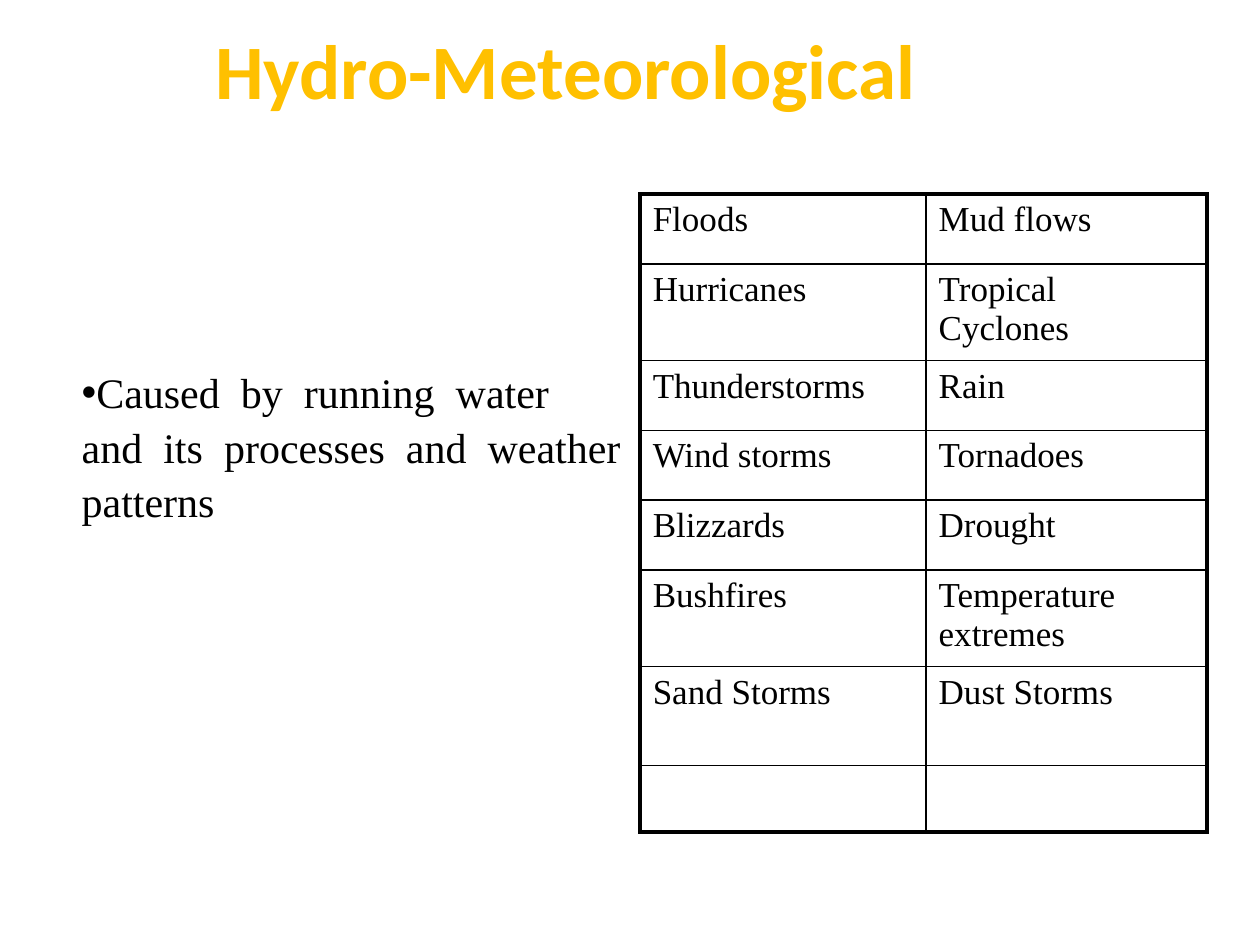
"""Build the hydro-meteorological hazards slide."""
from pptx import Presentation
from pptx.dml.color import RGBColor
from pptx.enum.text import MSO_ANCHOR
from pptx.oxml.ns import qn
from pptx.util import Pt
from lxml.etree import SubElement

TITLE = "Hydro-Meteorological"
CAUSE = "Caused by running water and its processes and weather patterns"
HAZARDS = [
    ("Floods", "Mud flows"),
    ("Hurricanes", "Tropical Cyclones"),
    ("Thunderstorms", "Rain"),
    ("Wind storms", "Tornadoes"),
    ("Blizzards", "Drought"),
    ("Bushfires", "Temperature extremes"),
    ("Sand Storms", "Dust Storms"),
    ("", ""),
]
ROW_HEIGHTS = [39.9, 51.4, 39.9, 39.9, 39.9, 51.4, 56.6, 38]
COLUMN_WIDTHS = [163.4, 160.6]
THEME = {
    "heading_font": "Calibri", "body_font": "Times New Roman",
    "amber": "FFC000", "black": "000000",
    "title_size": 44, "cause_size": 24, "hazard_size": 20,
    "outer_line": 2.25, "inner_line": 1,
}


def write(frame, text, *, size, font=THEME["body_font"], color=THEME["black"],
          bold=False, spacing=1.0, bullet=None, word_gap=0):
    """Write one formatted paragraph, optionally bulleted or with wide word gaps."""
    paragraph = frame.paragraphs[0]
    paragraph.line_spacing = spacing
    if bullet:
        properties = paragraph._p.get_or_add_pPr()
        properties.set("marL", "0")
        properties.set("indent", "0")
        SubElement(properties, qn("a:buFont")).set("typeface", "Arial")
        SubElement(properties, qn("a:buChar")).set("char", bullet)
    pieces = text.replace(" ", "| |").split("|") if word_gap else [text]
    for piece in pieces:
        run = paragraph.add_run()
        run.text = piece
        run.font.size = Pt(size)
        run.font.name = font
        run.font.bold = bold
        run.font.color.rgb = RGBColor.from_string(color)
        if piece == " ":
            run._r.get_or_add_rPr().set("spc", str(word_gap * 100))


def add_frame(slide, left, top, width, height):
    """Add a wrapping text box and return its text frame."""
    frame = slide.shapes.add_textbox(Pt(left), Pt(top), Pt(width), Pt(height)).text_frame
    frame.word_wrap = True
    return frame


def draw_borders(cell, widths):
    """Draw the left, right, top and bottom borders of a cell."""
    properties = cell._tc.get_or_add_tcPr()
    for position, (side, width) in enumerate(widths.items()):
        border = properties.makeelement(qn(f"a:{side}"), {"w": str(Pt(width))})
        fill = SubElement(border, qn("a:solidFill"))
        SubElement(fill, qn("a:srgbClr")).set("val", THEME["black"])
        properties.insert(position, border)


def add_hazards(slide, left, top):
    """Add the ruled table of hazards."""
    table = slide.shapes.add_table(
        len(HAZARDS), len(COLUMN_WIDTHS), Pt(left), Pt(top),
        Pt(sum(COLUMN_WIDTHS)), Pt(sum(ROW_HEIGHTS))).table
    table.first_row = table.horz_banding = False
    for column, width in zip(table.columns, COLUMN_WIDTHS):
        column.width = Pt(width)
    for row, height in zip(table.rows, ROW_HEIGHTS):
        row.height = Pt(height)
    last_row, last_column = len(HAZARDS) - 1, len(COLUMN_WIDTHS) - 1
    for r, hazards in enumerate(HAZARDS):
        for c, hazard in enumerate(hazards):
            cell = table.cell(r, c)
            cell.fill.background()
            if hazard:
                write(cell.text_frame, hazard, size=THEME["hazard_size"])
            on_edge = {"lnL": c == 0, "lnR": c == last_column,
                       "lnT": r == 0, "lnB": r == last_row}
            draw_borders(cell, {side: THEME["outer_line" if edge else "inner_line"]
                                for side, edge in on_edge.items()})


def main():
    """Assemble and save the slide."""
    deck = Presentation()
    deck.slide_width, deck.slide_height = Pt(720), Pt(540)
    slide = deck.slides.add_slide(deck.slide_layouts[6])

    title = add_frame(slide, 6, 21.6, 648, 90)
    title.vertical_anchor = MSO_ANCHOR.MIDDLE
    title.margin_left, title.margin_bottom = Pt(117), Pt(52)
    write(title, TITLE, size=THEME["title_size"], font=THEME["heading_font"],
          color=THEME["amber"], bold=True, spacing=0.9)

    add_hazards(slide, 365.8, 110.9)

    cause = add_frame(slide, 39.6, 203.8, 326.2, 94.3)
    cause.margin_right = Pt(8.5)
    write(cause, CAUSE, size=THEME["cause_size"], spacing=1.08, bullet="•", word_gap=6)

    deck.save("out.pptx")


if __name__ == "__main__":
    main()
